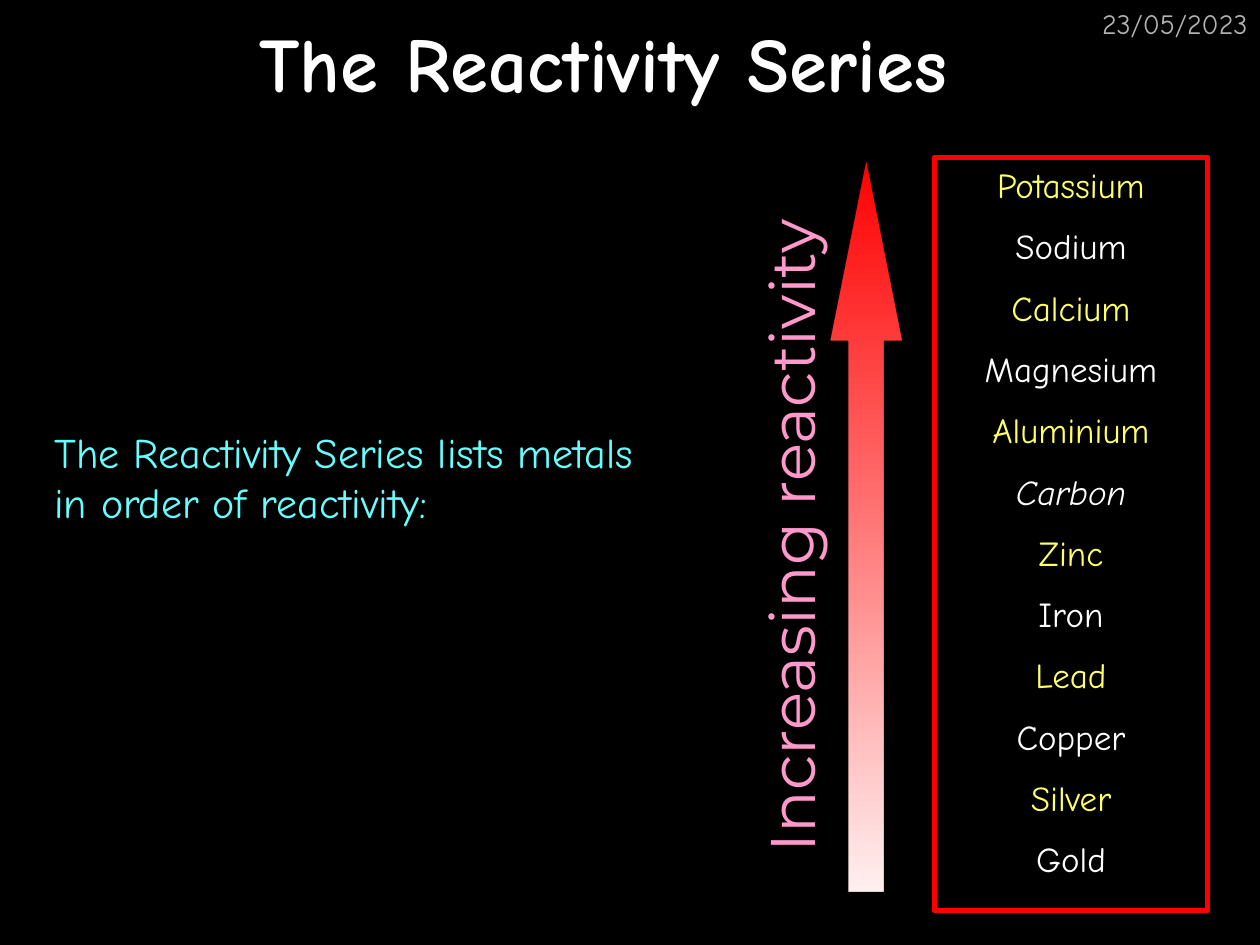
from pptx import Presentation
from pptx.dml.color import RGBColor
from pptx.enum.shapes import MSO_SHAPE
from pptx.enum.text import MSO_ANCHOR, PP_ALIGN
from pptx.util import Pt

# Content
DATE = "23/05/2023"
TITLE = "The Reactivity Series"
INTRO = "The Reactivity Series lists metals in order of reactivity:"
TREND = "Increasing reactivity"
METALS = ["Potassium", "Sodium", "Calcium", "Magnesium", "Aluminium", "Carbon",
          "Zinc", "Iron", "Lead", "Copper", "Silver", "Gold"]
NONMETAL = "Carbon"

HEX = {"back": "000000", "white": "FFFFFF", "grey": "B2B2B2", "cyan": "66FFFF",
       "yellow": "FFFF66", "pink": "FF99CC", "red": "FF0000", "pale": "FFEFEF"}
FONT = "Comic Neue"


def color(name):
    return RGBColor.from_string(HEX[name])


def style(para, size, tint, align, face=FONT, bold=False, slant=False):
    para.alignment = align
    for run in para.runs:
        font = run.font
        font.name, font.size = face, Pt(size)
        font.bold, font.italic = bold, slant
        font.color.rgb = color(tint)


def label(text, area, size, tint, align, wrap=True, **extra):
    box = slide.shapes.add_textbox(*map(Pt, area))
    frame = box.text_frame
    frame.text, frame.word_wrap = text, wrap
    style(frame.paragraphs[0], size, tint, align, **extra)
    return box


deck = Presentation()
deck.slide_width, deck.slide_height = Pt(720), Pt(540)
slide = deck.slides.add_slide(deck.slide_layouts[6])
slide.background.fill.solid()
slide.background.fill.fore_color.rgb = color("back")

# Date, title and introduction
label(DATE, (570, 0, 150, 36), 16, "grey", PP_ALIGN.RIGHT)
title = label(TITLE, (0, 0, 690, 70), 44, "white", PP_ALIGN.CENTER, bold=True)
title.text_frame.vertical_anchor = MSO_ANCHOR.MIDDLE
label(INTRO, (24, 240, 348, 65), 24, "cyan", PP_ALIGN.LEFT)

# Framed list of metals in alternating colours
frame = slide.shapes.add_shape(MSO_SHAPE.RECTANGLE, Pt(534), Pt(90), Pt(156), Pt(430.5))
frame.shadow.inherit = False
frame.fill.background()
frame.line.color.rgb = color("red")
frame.line.width = Pt(3)
body = frame.text_frame
body.word_wrap = True
body.vertical_anchor = MSO_ANCHOR.TOP
body.text = "\n".join(METALS)
for i, para in enumerate(body.paragraphs):
    style(para, 20, ("yellow", "white")[i % 2], PP_ALIGN.CENTER,
          slant=para.text == NONMETAL)
    if i:
        para.space_before = Pt(11)

# Arrow fading from red at its tip
arrow = slide.shapes.add_shape(MSO_SHAPE.UP_ARROW, Pt(474), Pt(90), Pt(42), Pt(420))
arrow.shadow.inherit = False
arrow.adjustments[0], arrow.adjustments[1] = 0.5, 2.5
arrow.fill.gradient()
arrow.fill.gradient_angle = 270
for stop, tint in zip(arrow.fill.gradient_stops, ("red", "pale")):
    stop.color.rgb = color(tint)
arrow.line.color.rgb = color("back")
arrow.line.width = Pt(0.75)

# Caption running up the arrow
trend = label(TREND, (238.5, 290, 407.5, 32), 36, "pink", PP_ALIGN.CENTER,
              wrap=False, face="Montserrat")
trend.rotation = 270

deck.save("out.pptx")
